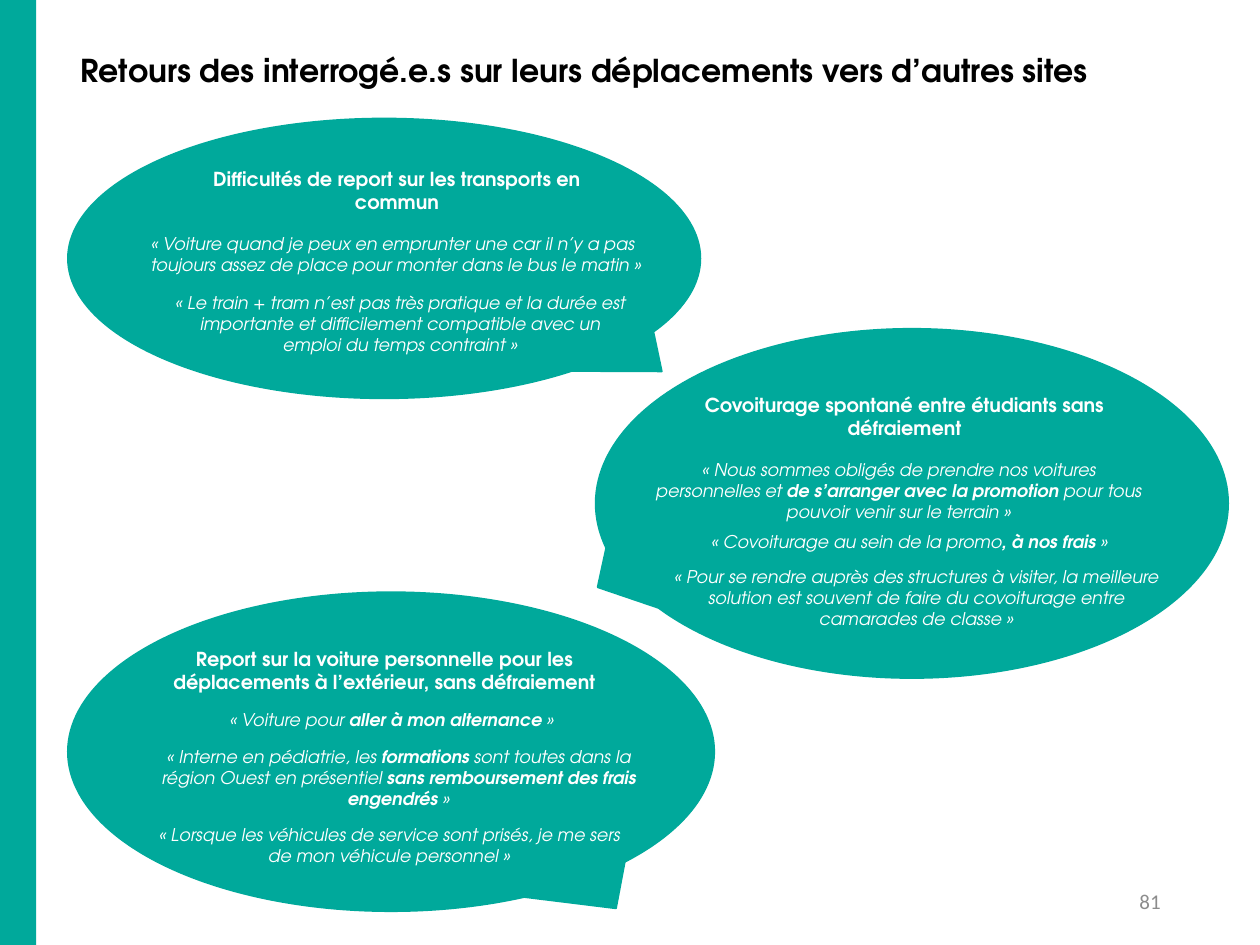
import pptx
import pptx.util
import pptx.dml.color
import pptx.enum.shapes
import pptx.enum.text

Cm = pptx.util.Cm
Shape = pptx.enum.shapes.MSO_SHAPE
Align = pptx.enum.text.PP_ALIGN
Anchor = pptx.enum.text.MSO_ANCHOR
TEAL = pptx.dml.color.RGBColor(0x00, 0xA9, 0x9B)
WHITE = pptx.dml.color.RGBColor(0xFF, 0xFF, 0xFF)
BLACK = pptx.dml.color.RGBColor(0x00, 0x00, 0x00)
GREY = pptx.dml.color.RGBColor(0x8C, 0x8C, 0x8C)
FONT = "TeX Gyre Adventor"


def write_text(box, text, size=10, font=FONT, color=WHITE, bold=False,
               italic=False, align=Align.CENTER, anchor=Anchor.TOP):
    frame = box.text_frame
    frame.word_wrap = True
    frame.auto_size = pptx.enum.text.MSO_AUTO_SIZE.NONE
    frame.vertical_anchor = anchor
    para = frame.paragraphs[0]
    para.alignment = align
    for index, part in enumerate(text.split("*")):
        span = para.add_run()
        span.text = part
        span.font.size = pptx.util.Pt(size)
        span.font.name = font
        span.font.color.rgb = color
        span.font.bold = bold or index % 2 == 1
        span.font.italic = italic


def add_teal_shape(kind, area):
    shape = slide.shapes.add_shape(kind, *map(Cm, area))
    shape.shadow.inherit = False
    shape.fill.solid()
    shape.fill.fore_color.rgb = TEAL
    shape.line.color.rgb = TEAL
    shape.line.width = pptx.util.Pt(1)
    return shape


deck = pptx.Presentation()
deck.slide_width = Cm(25.4)
deck.slide_height = Cm(19.05)
slide = deck.slides.add_slide(deck.slide_layouts[5])

title = slide.shapes.title
title.left, title.top, title.width, title.height = map(Cm, (1.37, 0.91, 23.47, 1.02))
write_text(title, "Retours des interrogé.e.s sur leurs déplacements vers d’autres sites",
           size=18, color=BLACK, bold=True, align=Align.LEFT)

side_bar = add_teal_shape(Shape.RECTANGLE, (0, 0, 0.73, 19.05))
side_bar.line.fill.background()

bubbles = [
    ((1.37, 2.39, 12.75, 5.64), (0.439, 0.404),
     (3.33, 3.25, 9.35, 1.19), "Difficultés de report sur les transports en commun", [
        ((2.79, 4.57, 10.97, 1.14), Align.LEFT,
         "« Voiture quand je peux en emprunter une car il n’y a pas toujours assez "
         "de place pour monter dans le bus le matin »"),
        ((3.28, 5.77, 9.58, 1.55), Align.CENTER,
         "« Le train + tram n’est pas très pratique et la durée est importante et "
         "difficilement compatible avec un emploi du temps contraint »"),
    ]),
    ((12.01, 6.63, 12.75, 7.04), (-0.497, 0.24),
     (13.79, 7.8, 8.89, 1.19), "Covoiturage spontané entre étudiants sans défraiement", [
        ((12.9, 9.12, 10.44, 1.55), Align.CENTER,
         "« Nous sommes obligés de prendre nos voitures personnelles et "
         "*de s’arranger avec la promotion *pour tous pouvoir venir sur le terrain »"),
        ((13, 10.57, 10.67, 0.69), Align.CENTER,
         "« Covoiturage au sein de la promo*, à nos frais* »"),
        ((13.18, 11.28, 10.59, 1.55), Align.CENTER,
         "« Pour se rendre auprès des structures à visiter, la meilleure solution "
         "est souvent de faire du covoiturage entre camarades de classe »"),
    ]),
    ((1.37, 11.94, 13.03, 6.43), (0.348, 0.491),
     (3.12, 12.93, 9.27, 1.19),
     "Report sur la voiture personnelle pour les déplacements à l’extérieur, sans défraiement", [
        ((2.72, 14.17, 10.36, 0.71), Align.CENTER,
         "« Voiture pour *aller à mon alternance* »"),
        ((2.87, 14.91, 10.34, 1.55), Align.CENTER,
         "« Interne en pédiatrie, les *formations* sont toutes dans la région Ouest "
         "en présentiel *sans remboursement des frais engendrés *»"),
        ((2.87, 16.48, 9.96, 1.14), Align.CENTER,
         "« Lorsque les véhicules de service sont prisés, je me sers de mon "
         "véhicule personnel »"),
    ]),
]

for area, tip, heading_area, heading, quotes in bubbles:
    bubble = add_teal_shape(Shape.OVAL_CALLOUT, area)
    bubble.adjustments[0], bubble.adjustments[1] = tip
    heading_box = slide.shapes.add_textbox(*map(Cm, heading_area))
    write_text(heading_box, heading, size=11, bold=True)
    for quote_area, align, quote in quotes:
        quote_box = slide.shapes.add_textbox(*map(Cm, quote_area))
        write_text(quote_box, quote, italic=True, align=align)

number_box = slide.shapes.add_textbox(*map(Cm, (17.93, 17.65, 5.72, 1.02)))
write_text(number_box, "81", size=12, font="Calibri", color=GREY,
           align=Align.RIGHT, anchor=Anchor.MIDDLE)

deck.save("out.pptx")
